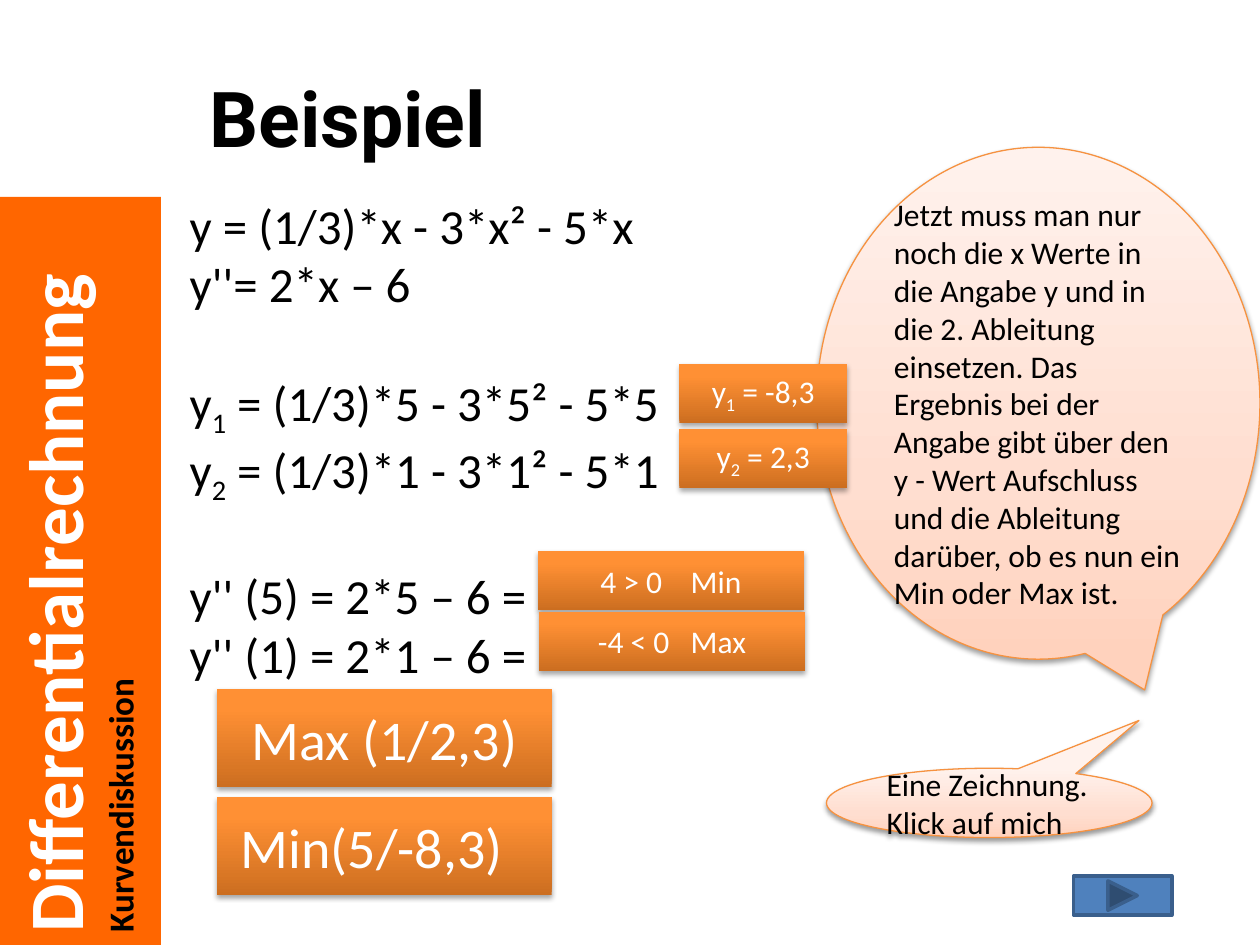
import copy

import pptx
import pptx.dml.color
import pptx.enum.shapes
import pptx.enum.text
import pptx.oxml
import pptx.oxml.ns
import pptx.util

Pt = pptx.util.Pt
SHAPE = pptx.enum.shapes.MSO_SHAPE
ALIGN = pptx.enum.text.PP_ALIGN
ANCHOR = pptx.enum.text.MSO_ANCHOR
colour = pptx.dml.color.RGBColor.from_string

ORANGE = [(0, "CC6E20"), (0.8, "FF9034"), (1, "FF9136")]
PEACH = [(0, "FFD2BD"), (0.35, "FFDED0"), (1, "FFF2ED")]
SUBSCRIPT = {"baseline": "-25000"}


def write(para, pieces, size, ink, align=ALIGN.LEFT, name="Calibri", bold=False):
    """Add one span per (text, extra run attributes) piece."""
    para.alignment = align
    for text, extras in pieces:
        span = para.add_run()
        span.text = text
        for key, value in {"size": Pt(size), "name": name, "bold": bold}.items():
            setattr(span.font, key, value)
        span.font.color.rgb = colour(ink)
        for key, value in extras.items():
            span.font._element.set(key, value)


def add_glossy(page, kind, place, stops, edge, opacity):
    """Add a shape with an upward gradient and a soft shadow below it."""
    shape = page.shapes.add_shape(kind, *map(Pt, place))
    shape.fill.gradient()
    shape.fill.gradient_angle = 90
    stop_list = shape._element.spPr.find(".//" + pptx.oxml.ns.qn("a:gsLst"))
    stop_list.append(copy.deepcopy(stop_list[-1]))
    for stop, (position, tint) in zip(shape.fill.gradient_stops, stops):
        stop.position = position
        stop.color.rgb = colour(tint)
    if edge:
        shape.line.color.rgb = colour(edge)
        shape.line.width = Pt(0.75)
    else:
        shape.line.fill.background()
    shape._element.spPr.append(pptx.oxml.parse_xml(
        f'<a:effectLst {pptx.oxml.ns.nsdecls("a")}>'
        '<a:outerShdw blurRad="39370" dist="21590" dir="5400000" rotWithShape="0">'
        f'<a:srgbClr val="000000"><a:alpha val="{opacity * 1000}"/></a:srgbClr>'
        '</a:outerShdw></a:effectLst>'))
    return shape


deck = pptx.Presentation()
deck.slide_width, deck.slide_height = Pt(720), Pt(540)
page = deck.slides.add_slide(deck.slide_layouts[5])

# Title
title = page.shapes.title
for key, value in {"left": 112.5, "top": 21.6, "width": 571.5, "height": 90}.items():
    setattr(title, key, Pt(value))
title.text_frame.vertical_anchor = ANCHOR.MIDDLE
write(title.text_frame.paragraphs[0], [("Beispiel", {})], 44, "000000",
      name="Roboto", bold=True)

# Vertical sidebar
sidebar = page.shapes.add_shape(SHAPE.RECTANGLE, Pt(0), Pt(112.5), Pt(92), Pt(427.5))
sidebar.shadow.inherit = False
sidebar.fill.solid()
sidebar.fill.fore_color.rgb = colour("FF6600")
sidebar.line.fill.background()
frame = sidebar.text_frame
frame.vertical_anchor = ANCHOR.TOP
frame._txBody.bodyPr.set("vert", "vert270")
write(frame.paragraphs[0], [("Differentialrechnung", {})], 44, "FFFFFF", bold=True)
write(frame.add_paragraph(), [("Kurvendiskussion", {})], 20, "000000", bold=True)

# Speech bubbles
bubbles = [
    ((466.7, 84.2, 253.3, 292.5), (0.24, 0.56),
     "Jetzt muss man nur noch die x Werte in die Angabe y und in die 2. Ableitung "
     "einsetzen. Das Ergebnis bei der Angabe gibt über den y - Wert Aufschluss und "
     "die Ableitung darüber, ob es nun ein Min oder Max ist."),
    ((472.3, 439, 186, 39.6), (0.46, -1.19), "Eine Zeichnung. Klick auf mich"),
]
for place, tail, text in bubbles:
    bubble = add_glossy(page, SHAPE.OVAL_CALLOUT, place, PEACH, "F69240", 38)
    bubble.adjustments[0], bubble.adjustments[1] = tail
    bubble.text_frame.word_wrap = True
    write(bubble.text_frame.paragraphs[0], [(text, {})], 18, "000000")

# Calculation: (pieces, space before)
calculation = [
    ([("y = (1/3)*x - 3*x² - 5*x", {})], 0),
    ([("y''= 2*x – 6", {})], 0),
    ([("y", {}), ("1", SUBSCRIPT), (" = (1/3)*5 - 3*5² - 5*5", {})], 34),
    ([("y", {}), ("2", SUBSCRIPT), (" = (1/3)*1 - 3*1² - 5*1", {})], 0),
    ([("y'' (5) = 2*5 – 6 =", {})], 34),
    ([("y'' (1) = 2*1 – 6 =", {})], 0),
]
box = page.shapes.add_textbox(Pt(101.3), Pt(108), Pt(366), Pt(278.6))
box.text_frame.word_wrap = True
for index, (pieces, gap) in enumerate(calculation):
    para = box.text_frame.paragraphs[0] if index == 0 else box.text_frame.add_paragraph()
    para.space_before = Pt(gap)
    write(para, pieces, 28, "000000")

# Result boxes: (place, size, right margin, pieces)
results = [
    ((124, 455.5, 191.3, 56.2), 32, 21.6, [("Min(5/-8,3)", {})]),
    ((124, 393.8, 191.3, 56.2), 32, 7.2, [("Max (1/2,3)", {})]),
    ((388.3, 208, 95.7, 33.8), 18, 7.2,
     [("y", {}), ("1", SUBSCRIPT), (" = -8,3", {})]),
    ((388.3, 245.2, 95.7, 33.8), 18, 7.2,
     [("y", {}), ("2", SUBSCRIPT), (" = 2,3", {})]),
    ((307.4, 315, 152, 33.8), 18, 7.2,
     [("4 > 0", {}), (" ", {"spc": "1220"}), ("Min", {})]),
    ((308, 349.5, 152, 33.8), 18, 7.2,
     [("-4 < 0", {}), (" ", {"spc": "810"}), ("Max", {})]),
]
for place, size, margin, pieces in results:
    result = add_glossy(page, SHAPE.RECTANGLE, place, ORANGE, None, 35)
    result.text_frame.word_wrap = True
    result.text_frame.margin_right = Pt(margin)
    write(result.text_frame.paragraphs[0], pieces, size, "FFFFFF", ALIGN.CENTER)

# Next button
button = page.shapes.add_shape(SHAPE.ACTION_BUTTON_FORWARD_OR_NEXT,
                               Pt(613.4), Pt(500.6), Pt(56.2), Pt(22.4))
button.shadow.inherit = False
button.fill.solid()
button.fill.fore_color.rgb = colour("4F81BD")
button.line.color.rgb = colour("3A5F8C")
button.line.width = Pt(2)

deck.save("out.pptx")
